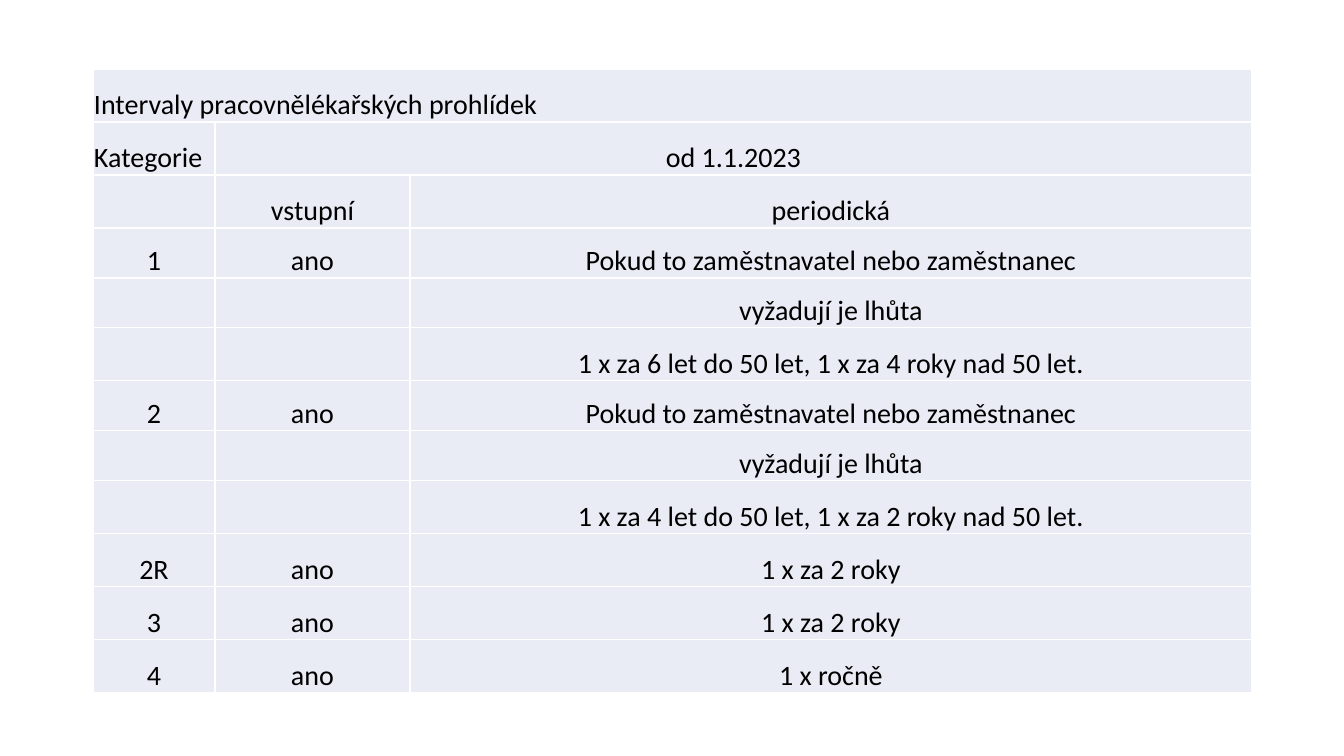
from dataclasses import dataclass

from lxml.etree import SubElement
from pptx import Presentation
from pptx.dml.color import RGBColor
from pptx.enum.text import MSO_ANCHOR, PP_ALIGN
from pptx.oxml.ns import qn
from pptx.util import Pt

# Content
ON_REQUEST = ("Pokud to zaměstnavatel nebo zaměstnanec", "vyžadují je lhůta")
ROWS = [
    ("Intervaly pracovnělékařských prohlídek", "", ""),
    ("Kategorie", "od 1.1.2023", ""),
    ("", "vstupní", "periodická"),
    ("1", "ano", ON_REQUEST[0]),
    ("", "", ON_REQUEST[1]),
    ("", "", "1 x za 6 let do 50 let, 1 x za 4 roky nad 50 let."),
    ("2", "ano", ON_REQUEST[0]),
    ("", "", ON_REQUEST[1]),
    ("", "", "1 x za 4 let do 50 let, 1 x za 2 roky nad 50 let."),
    ("2R", "ano", "1 x za 2 roky"),
    ("3", "ano", "1 x za 2 roky"),
    ("4", "ano", "1 x ročně"),
]
MERGES = [((0, 0), (0, 2)), ((1, 1), (1, 2))]
LEFT_ALIGNED = {(0, 0), (1, 0)}

# Layout in px
PAGE_SIZE = (1344, 756)
TABLE_LEFT, TABLE_TOP = 93, 69
COLUMN_WIDTHS = (122, 195, 842)
ROW_HEIGHT, REQUEST_ROW_HEIGHT = 53, 50
CELL_INSET = 1


@dataclass(frozen=True)
class Theme:
    font: str = "Calibri"
    size: int = 20
    text: str = "000000"
    cell: str = "E9EBF5"
    border: str = "FFFFFF"
    border_width: int = 1


THEME = Theme()


def px(length):
    return round(length * 914400 / 100.8)


def add_borders(cell):
    properties = cell._tc.get_or_add_tcPr()
    for side in ("a:lnL", "a:lnR", "a:lnT", "a:lnB"):
        line = SubElement(properties, qn(side), w=str(Pt(THEME.border_width)))
        fill = SubElement(line, qn("a:solidFill"))
        SubElement(fill, qn("a:srgbClr"), val=THEME.border)


def style_cell(cell, text, alignment):
    add_borders(cell)
    cell.fill.solid()
    cell.fill.fore_color.rgb = RGBColor.from_string(THEME.cell)
    cell.margin_left = cell.margin_right = cell.margin_top = px(CELL_INSET)
    cell.margin_bottom = 0
    cell.vertical_anchor = MSO_ANCHOR.BOTTOM
    cell.text = text
    para = cell.text_frame.paragraphs[0]
    para.alignment = alignment
    para.font.name = THEME.font
    para.font.size = Pt(THEME.size)
    para.font.color.rgb = RGBColor.from_string(THEME.text)


def main():
    deck = Presentation()
    deck.slide_width, deck.slide_height = map(px, PAGE_SIZE)
    page = deck.slides.add_slide(deck.slide_layouts[6])

    # Table grid
    heights = [REQUEST_ROW_HEIGHT if row[2] in ON_REQUEST else ROW_HEIGHT for row in ROWS]
    table = page.shapes.add_table(
        len(ROWS), len(COLUMN_WIDTHS), px(TABLE_LEFT), px(TABLE_TOP),
        px(sum(COLUMN_WIDTHS)), px(sum(heights)),
    ).table
    table.first_row = table.horz_banding = False
    for column, width in zip(table.columns, COLUMN_WIDTHS):
        column.width = px(width)
    for row, height in zip(table.rows, heights):
        row.height = px(height)

    # Cells
    for row_index, row in enumerate(ROWS):
        for column_index, text in enumerate(row):
            place = (row_index, column_index)
            alignment = PP_ALIGN.LEFT if place in LEFT_ALIGNED else PP_ALIGN.CENTER
            style_cell(table.cell(*place), text, alignment)

    # Merged headings
    for first, last in MERGES:
        table.cell(*first).merge(table.cell(*last))

    deck.save("out.pptx")


if __name__ == "__main__":
    main()
